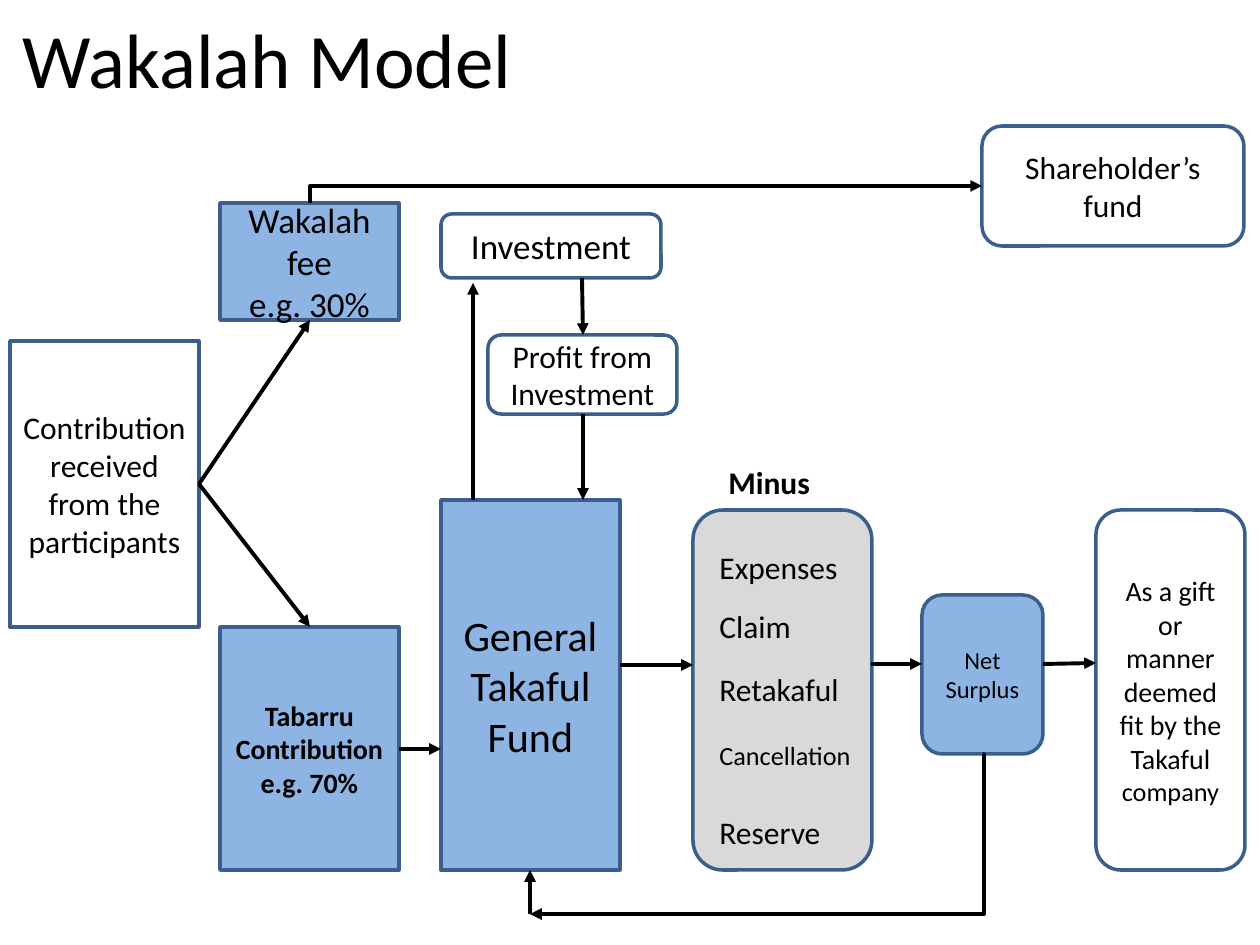
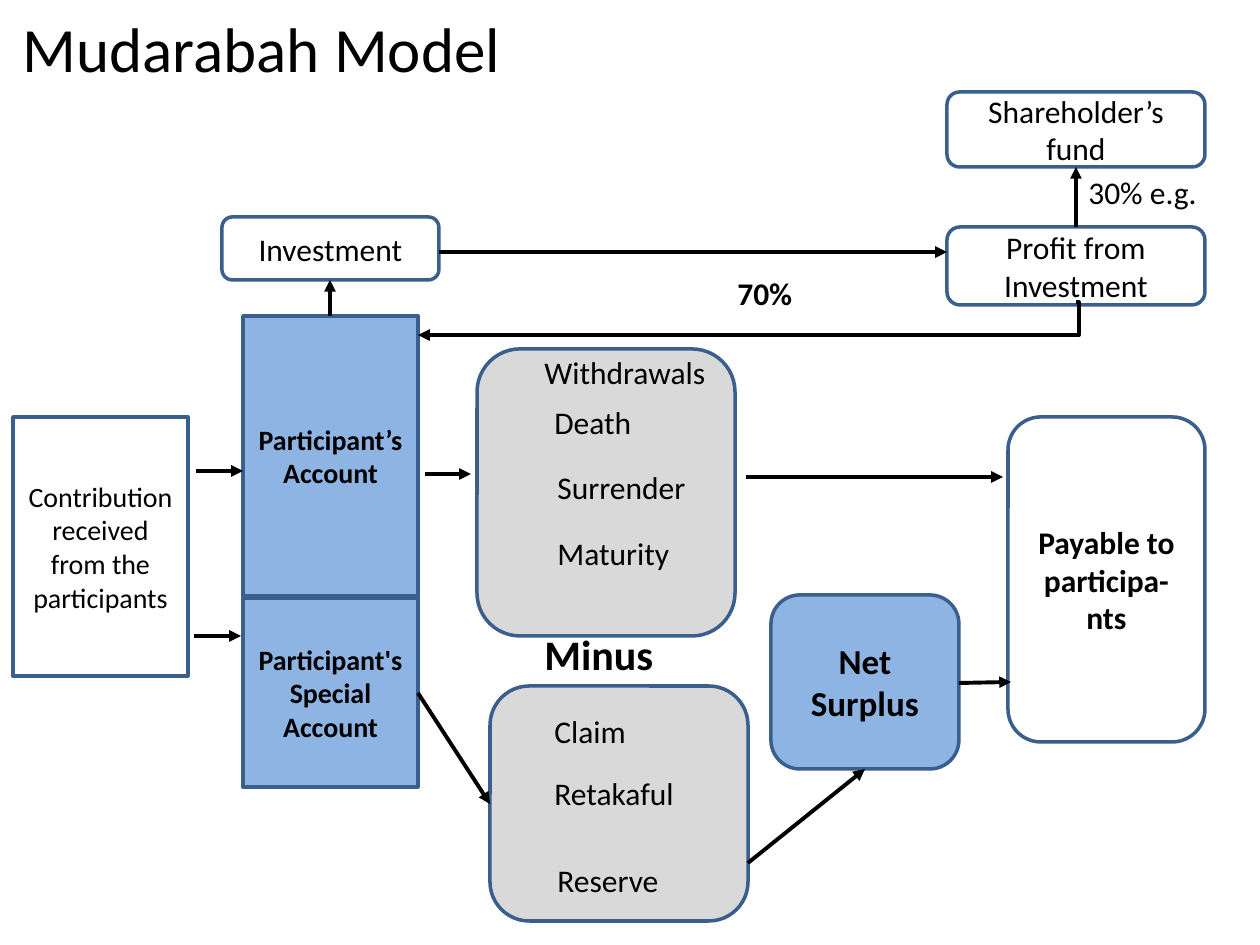
from lxml import etree
from pptx import Presentation
from pptx import util as u
from pptx.dml.color import RGBColor
from pptx.enum import shapes, text
from pptx.oxml.ns import qn

PX_PER_INCH = 126
FONT = "Calibri"
COLOURS = {"ink": "000000", "outline": "3A5F8C", "plain": "FFFFFF",
           "fund": "8EB4E3", "deduction": "D9D9D9"}
PRESETS = {"rect": shapes.MSO_SHAPE.RECTANGLE,
           "round": shapes.MSO_SHAPE.ROUNDED_RECTANGLE}
TITLE_LEFT = 10

# Boxes: outline, fill, (left, top, width, height), paragraphs, size, bold.
# A paragraph is a string, or a list of (words, size) runs.
# Labels: words, (left, top, width, height), size, bold.
# Elbows: start, end, rotation, flips, preset, adjustment, joined boxes.
WAKALAH = {
    "title": ("Wakalah Model", (5, 519, 106), 44),
    "boxes": [
        ("rect", "plain", (10, 341, 189, 286),
         ["Contribution received from the participants"], 18, False),
        ("rect", "fund", (220, 203, 179, 117), ["Wakalah fee", "e.g. 30%"], 20, False),
        ("rect", "fund", (220, 627, 179, 243),
         ["Tabarru Contribution", "e.g. 70%"], 16, True),
        ("round", "plain", (441, 214, 220, 64), ["Investment"], 20, False),
        ("round", "plain", (488, 335, 189, 79), ["Profit from Investment"], 18, False),
        ("rect", "fund", (441, 500, 179, 370), ["General Takaful Fund"], 24, False),
        ("round", "deduction", (693, 510, 179, 360), [], 18, False),
        ("round", "fund", (922, 595, 121, 159), ["Net Surplus"], 14, False),
        ("round", "plain", (1096, 510, 149, 360),
         [[("As a gift or manner deemed fit by the Takaful ", 16), ("company", 15)]],
         16, False),
        ("round", "plain", (982, 126, 262, 120), ["Shareholder’s fund"], 18, False),
    ],
    "labels": [("Minus", (716, 457, 126, 52), 18, True)] + [
        (words, (707, top, 158, 52), size, False) for words, top, size in [
            ("Expenses", 542, 18), ("Claim", 601, 18), ("Retakaful", 664, 18),
            ("Cancellation", 733, 15), ("Reserve", 807, 18)]],
    "arrows": [
        ((199, 484), (310, 320)), ((199, 484), (310, 627)),
        ((473, 500), (473, 283)), ((582, 278), (583, 335)),
        ((583, 414), (583, 500)), ((399, 749), (441, 749)),
        ((620, 665), (693, 665)), ((871, 664), (922, 664)),
        ((1043, 664), (1096, 663)), ((530, 914), (530, 870)),
    ],
    "elbows": [
        ((310, 203), (982, 186), 90, ("flipH", "flipV"), "bentConnector2", None,
         ("Wakalah fee", "Shareholder’s fund")),
        ((983, 754), (530, 914), 180, ("flipV",), "bentConnector3", -200, None),
    ],
}

MUDARABAH = {
    "title": ("Mudarabah Model", (3, 588, 89), 36),
    "boxes": [
        ("round", "deduction", (490, 686, 258, 235), [], 18, False),
        ("rect", "plain", (13, 417, 175, 259),
         ["Contribution received from the participants"], 16, False),
        ("rect", "fund", (243, 316, 175, 280), ["Participant’s Account"], 16, True),
        ("rect", "fund", (243, 598, 175, 189),
         ["Participant's Special Account"], 16, True),
        ("round", "plain", (222, 217, 217, 63), ["Investment"], 18, False),
        ("round", "plain", (947, 227, 258, 78), ["Profit from Investment"], 18, False),
        ("round", "deduction", (477, 349, 258, 287), [], 18, False),
        ("round", "fund", (771, 595, 188, 174), ["Net Surplus"], 20, True),
        ("round", "plain", (1008, 417, 197, 325), ["Payable to participa-nts"], 18, True),
        ("round", "plain", (947, 92, 258, 75), ["Shareholder’s fund"], 18, False),
    ],
    "labels": [
        ("Minus", (532, 622, 173, 63), 24, True),
        ("30% e.g.", (1076, 167, 165, 50), 18, False),
        ("70%", (725, 268, 164, 50), 18, True),
        ("Withdrawals", (532, 347, 193, 50), 18, False),
    ] + [(words, (left, top, 155, 50), 18, False) for words, left, top in [
        ("Death", 542, 397), ("Surrender", 545, 462), ("Maturity", 545, 528),
        ("Claim", 542, 706), ("Retakaful", 542, 768), ("Reserve", 545, 855)]],
    "arrows": [
        ((196, 471), (243, 471)), ((194, 636), (241, 636)),
        ((330, 316), (330, 280)), ((746, 477), (1003, 477)),
        ((418, 693), (490, 804)), ((439, 252), (947, 252)),
        ((959, 683), (1011, 682)), ((1076, 227), (1076, 167)),
        ((425, 474), (471, 474)), ((748, 863), (865, 769)),
    ],
    "elbows": [
        ((1076, 302), (418, 335), 180, ("flipV",), "bentConnector3", -400, None),
    ],
}


def px(length):
    return u.Emu(round(length * 914400 / PX_PER_INCH))


def colour(name):
    return RGBColor.from_string(COLOURS[name])


def set_all(target, values):
    for name, value in values.items():
        setattr(target, name, value)


def write(shape, paragraphs, size, bold, alignment, anchor):
    frame = shape.text_frame
    set_all(frame, {"word_wrap": True, "auto_size": text.MSO_AUTO_SIZE.NONE,
                    "vertical_anchor": anchor})
    for index, content in enumerate(paragraphs):
        paragraph = frame.add_paragraph() if index else frame.paragraphs[0]
        paragraph.alignment = alignment
        runs = [(content, size)] if isinstance(content, str) else content
        for words, run_size in runs:
            run = paragraph.add_run()
            run.text = words
            set_all(run.font, {"name": FONT, "size": u.Pt(run_size), "bold": bold})
            run.font.color.rgb = colour("ink")


def add_title(slide, words, place, size):
    top, width, height = place
    title = slide.shapes.title
    set_all(title, {"left": px(TITLE_LEFT), "top": px(top),
                    "width": px(width), "height": px(height)})
    write(title, [words], size, False, text.PP_ALIGN.LEFT, text.MSO_ANCHOR.TOP)


def add_box(slide, preset, fill, place, paragraphs, size, bold):
    box = slide.shapes.add_shape(PRESETS[preset], *map(px, place))
    box.shadow.inherit = False
    box.fill.solid()
    box.fill.fore_color.rgb = colour(fill)
    box.line.color.rgb = colour("outline")
    box.line.width = u.Pt(2)
    write(box, paragraphs, size, bold, text.PP_ALIGN.CENTER, text.MSO_ANCHOR.MIDDLE)
    return box


def add_label(slide, words, place, size, bold):
    label = slide.shapes.add_textbox(*map(px, place))
    write(label, [words], size, bold, text.PP_ALIGN.LEFT, text.MSO_ANCHOR.TOP)


def add_arrow(slide, start, end, kind=shapes.MSO_CONNECTOR.STRAIGHT):
    arrow = slide.shapes.add_connector(kind, *map(px, start + end))
    arrow.line.color.rgb = colour("ink")
    arrow.line.width = u.Pt(2.25)
    properties = arrow._element.spPr
    etree.SubElement(properties.find(qn("a:ln")), qn("a:tailEnd"), type="triangle")
    etree.SubElement(properties, qn("a:effectLst"))
    return arrow


def add_elbow(slide, boxes, start, end, rotation, flips, preset, adjustment, joined):
    elbow = add_arrow(slide, start, end, shapes.MSO_CONNECTOR.ELBOW)
    if joined:
        # Leave from the top of one box, arrive at the left of the other
        elbow.begin_connect(boxes[joined[0]], 0)
        elbow.end_connect(boxes[joined[1]], 1)
    width, height = abs(end[0] - start[0]), abs(end[1] - start[1])
    if rotation == 90:
        width, height = height, width
    set_all(elbow, {"left": px((start[0] + end[0] - width) / 2),
                    "top": px((start[1] + end[1] - height) / 2),
                    "width": px(width), "height": px(height)})
    frame = elbow._element.spPr.find(qn("a:xfrm"))
    frame.set("rot", str(rotation * 60000))
    for flip in ("flipH", "flipV"):
        frame.set(flip, str(int(flip in flips)))
    geometry = elbow._element.spPr.find(qn("a:prstGeom"))
    geometry.set("prst", preset)
    if adjustment is not None:
        guides = geometry.find(qn("a:avLst"))
        if guides is None:
            guides = etree.SubElement(geometry, qn("a:avLst"))
        etree.SubElement(guides, qn("a:gd"), name="adj1", fmla=f"val {adjustment}")


def add_model(presentation, model):
    slide = presentation.slides.add_slide(presentation.slide_layouts[5])
    add_title(slide, *model["title"])
    boxes = {}
    for box in model["boxes"]:
        shape = add_box(slide, *box)
        if shape.text_frame.text:
            boxes[shape.text_frame.paragraphs[0].text] = shape
    for arrow in model["arrows"]:
        add_arrow(slide, *arrow)
    for elbow in model["elbows"]:
        add_elbow(slide, boxes, *elbow)
    for label in model["labels"]:
        add_label(slide, *label)


def main():
    presentation = Presentation()
    presentation.slide_width = u.Inches(10)
    presentation.slide_height = u.Inches(7.5)
    for model in (WAKALAH, MUDARABAH):
        add_model(presentation, model)
    presentation.save("out.pptx")


if __name__ == "__main__":
    main()
